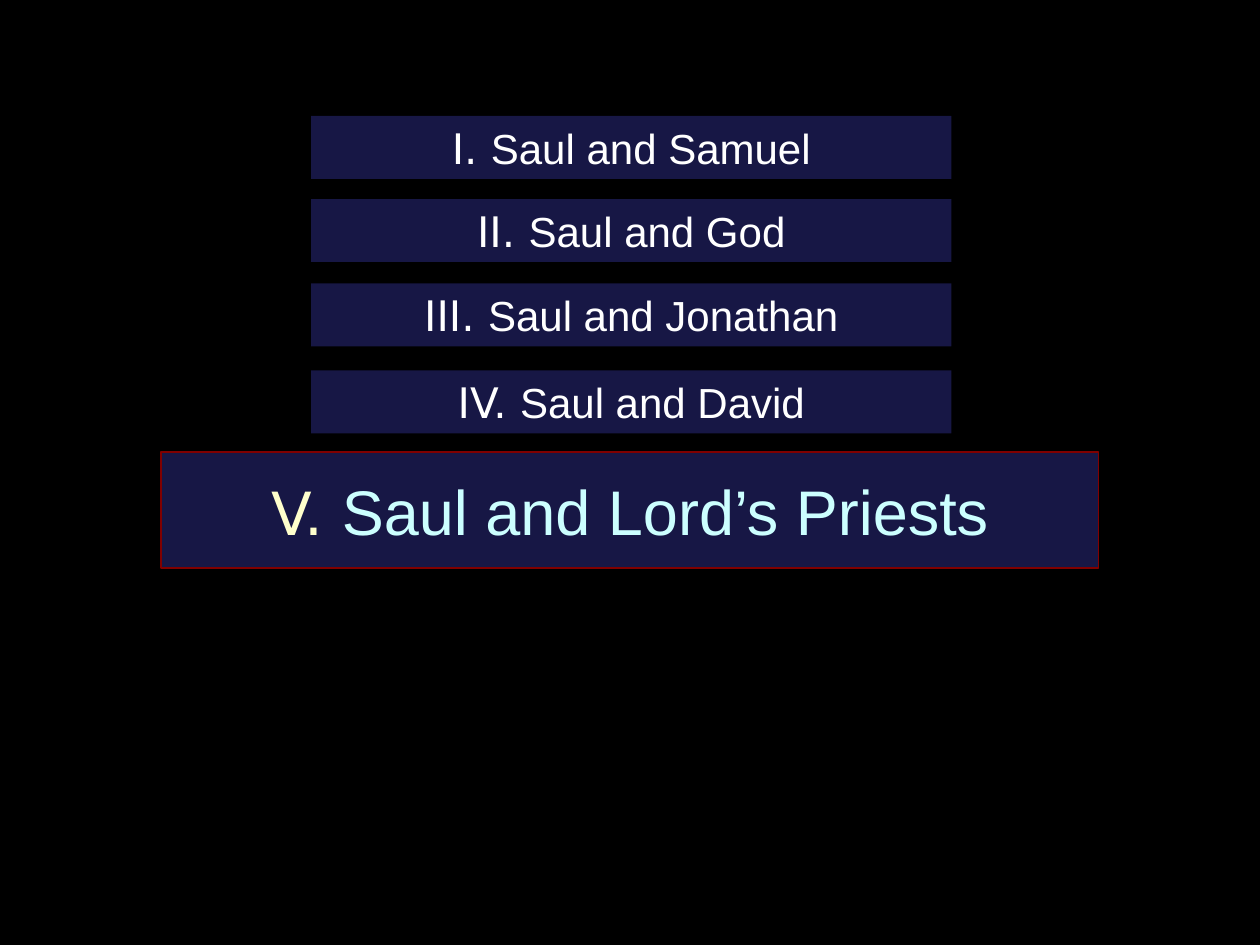
from pptx import Presentation
from pptx.dml.color import RGBColor
from pptx.enum.shapes import MSO_SHAPE as Shape
from pptx.enum.text import MSO_ANCHOR as Anchor, PP_ALIGN as Align
from pptx.util import Inches, Pt

BLACK = RGBColor(0x00, 0x00, 0x00)
NAVY = RGBColor(0x17, 0x17, 0x45)
MAROON = RGBColor(0x80, 0x00, 0x00)
WHITE = RGBColor(0xFF, 0xFF, 0xFF)
CREAM = RGBColor(0xFF, 0xFF, 0xCC)
PALE_CYAN = RGBColor(0xCC, 0xFF, 0xFF)

TOPICS = [
    ("I. ", "Saul and Samuel", 0.92),
    ("II. ", "Saul and God", 1.58),
    ("III. ", "Saul and Jonathan", 2.25),
    ("IV. ", "Saul and David", 2.94),
]


def add_text(para, text, *, font, size, color):
    span = para.add_run()
    span.text = text
    span.font.name = font
    span.font.size = Pt(size)
    span.font.color.rgb = color


class Outline:
    """Style of the outline bars and the page they are placed on."""

    numeral_font = "DejaVu Sans"
    title_font = "Arial"
    bar_fill = NAVY

    def __init__(self, page):
        self.page = page

    def background(self, color):
        fill = self.page.background.fill
        fill.solid()
        fill.fore_color.rgb = color

    def bar(self, left, top, width, height, border=None):
        """Add a filled bar and return its centred paragraph."""
        box = self.page.shapes.add_shape(
            Shape.RECTANGLE, Inches(left), Inches(top), Inches(width), Inches(height))
        box.shadow.inherit = False
        box.fill.solid()
        box.fill.fore_color.rgb = self.bar_fill
        if border is None:
            box.line.fill.background()
        else:
            box.line.color.rgb = border
            box.line.width = Pt(1)
        box.text_frame.word_wrap = True
        box.text_frame.vertical_anchor = Anchor.MIDDLE
        para = box.text_frame.paragraphs[0]
        para.alignment = Align.CENTER
        return para

    def topic(self, numeral, title, top):
        para = self.bar(2.47, top, 5.08, 0.5)
        add_text(para, numeral, font=self.numeral_font, size=24, color=WHITE)
        add_text(para, title, font=self.title_font, size=24, color=WHITE)

    def current_topic(self, numeral, title, top):
        para = self.bar(1.28, top, 7.44, 0.92, border=MAROON)
        add_text(para, numeral, font=self.numeral_font, size=34, color=CREAM)
        add_text(para, title, font=self.title_font, size=36, color=PALE_CYAN)


def main():
    deck = Presentation()
    deck.slide_width, deck.slide_height = Inches(10), Inches(7.5)
    outline = Outline(deck.slides.add_slide(deck.slide_layouts[6]))
    outline.background(BLACK)
    for numeral, title, top in TOPICS:
        outline.topic(numeral, title, top)
    outline.current_topic("V. ", "Saul and Lord’s Priests", 3.59)
    deck.save("out.pptx")


if __name__ == "__main__":
    main()
